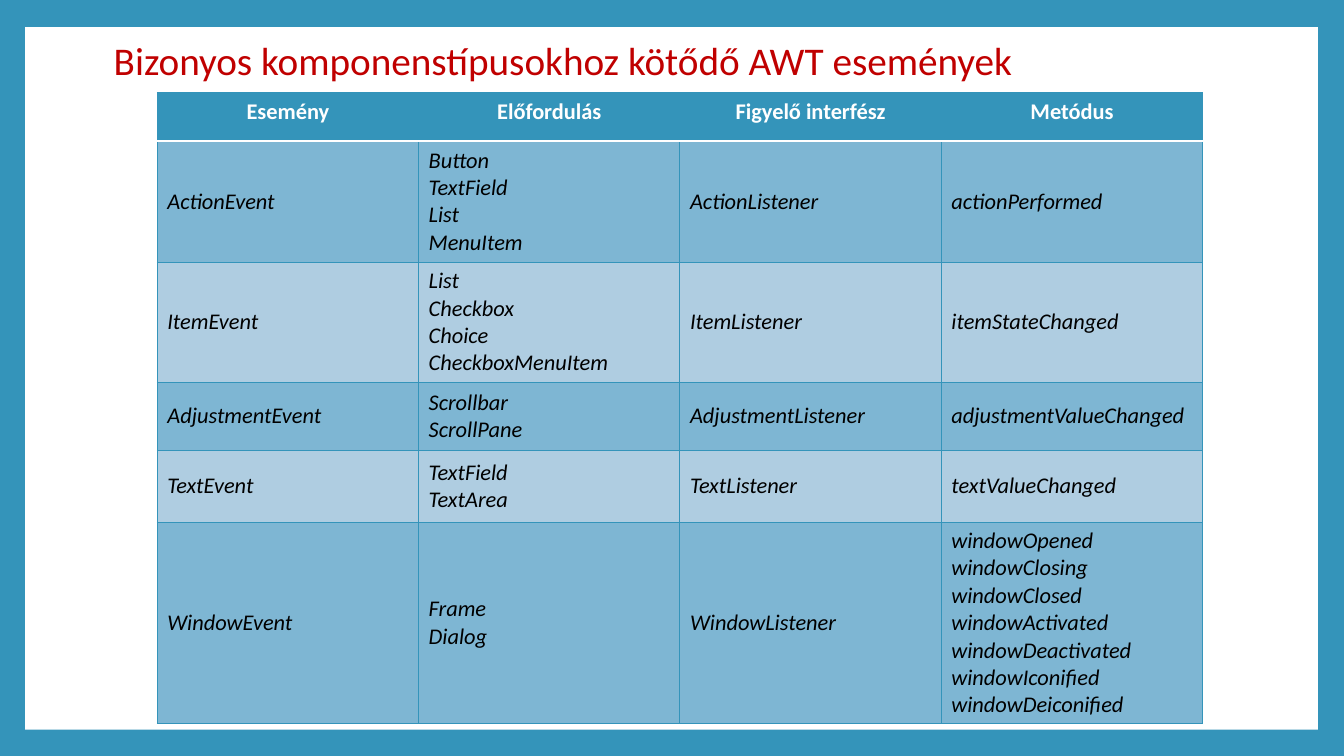
import pptx
import pptx.util
import pptx.dml.color
import pptx.enum.shapes
import pptx.enum.text
import pptx.oxml.ns
import lxml.etree

TITLE = "Bizonyos komponenstípusokhoz kötődő AWT események"
HEADERS = ["Esemény", "Előfordulás", "Figyelő interfész", "Metódus"]
EVENTS = [
    ("ActionEvent", "Button\nTextField\nList\nMenuItem", "ActionListener", "actionPerformed"),
    ("ItemEvent", "List\nCheckbox\nChoice\nCheckboxMenuItem", "ItemListener", "itemStateChanged"),
    ("AdjustmentEvent", "Scrollbar\nScrollPane", "AdjustmentListener", "adjustmentValueChanged"),
    ("TextEvent", "TextField\nTextArea", "TextListener", "textValueChanged"),
    ("WindowEvent", "Frame\nDialog", "WindowListener",
     "windowOpened\nwindowClosing\nwindowClosed\nwindowActivated\n"
     "windowDeactivated\nwindowIconified\nwindowDeiconified"),
]
ROW_HEIGHTS = [0.48, 1.2, 1.19, 0.68, 0.71, 2]
TABLE_LEFT, TABLE_TOP, TABLE_WIDTH = 1.56, 0.92, 10.37
COLORS = {"frame": "3494BA", "paper": "FFFFFF", "title": "C00000", "text": "000000",
          "dark band": "7EB6D3", "light band": "AFCDE1"}
FONT = "Calibri"

Inches, Pt = pptx.util.Inches, pptx.util.Pt
ANCHOR = pptx.enum.text.MSO_ANCHOR


def color(name):
    return pptx.dml.color.RGBColor.from_string(COLORS[name])


def style_font(font, size, color_name, bold=False, italic=False):
    font.name, font.size = FONT, Pt(size)
    font.bold, font.italic = bold, italic
    font.color.rgb = color(color_name)


def add_border(cell, side, color_name, width):
    properties = cell._tc.get_or_add_tcPr()
    line = lxml.etree.SubElement(properties, pptx.oxml.ns.qn(f"a:ln{side}"), w=str(Pt(width)))
    fill = lxml.etree.SubElement(line, pptx.oxml.ns.qn("a:solidFill"))
    lxml.etree.SubElement(fill, pptx.oxml.ns.qn("a:srgbClr"), val=COLORS[color_name])


def fill_cell(cell, text, row):
    header = row == 0
    white_side = {0: "B", 1: "T"}.get(row)
    for side in "LRTB":
        if side == white_side:
            add_border(cell, side, "paper", 1.5)
        else:
            add_border(cell, side, "frame", 0.79)
    band = "frame" if header else "dark band" if row % 2 else "light band"
    cell.fill.solid()
    cell.fill.fore_color.rgb = color(band)
    cell.vertical_anchor = ANCHOR.TOP if header else ANCHOR.MIDDLE
    cell.text = text
    for para in cell.text_frame.paragraphs:
        if header:
            para.alignment = pptx.enum.text.PP_ALIGN.CENTER
        style_font(para.font, 16, "paper" if header else "text", bold=header, italic=not header)


def add_paper(page):
    page.background.fill.solid()
    page.background.fill.fore_color.rgb = color("frame")
    paper = page.shapes.add_shape(pptx.enum.shapes.MSO_SHAPE.RECTANGLE,
                                  Inches(0.25), Inches(0.27), Inches(12.82), Inches(6.97))
    paper.shadow.inherit = False
    paper.fill.solid()
    paper.fill.fore_color.rgb = color("paper")
    paper.line.fill.background()


def add_title(page):
    box = page.shapes.add_textbox(Inches(1.03), Inches(0.35), Inches(10.8), Inches(0.54))
    frame = box.text_frame
    frame.word_wrap = True
    frame.vertical_anchor = ANCHOR.MIDDLE
    frame.text = TITLE
    para = frame.paragraphs[0]
    para.line_spacing = 0.9
    style_font(para.font, 28, "title")


def add_event_table(page):
    rows = [HEADERS, *EVENTS]
    table = page.shapes.add_table(len(rows), len(HEADERS), Inches(TABLE_LEFT), Inches(TABLE_TOP),
                                  Inches(TABLE_WIDTH), Inches(sum(ROW_HEIGHTS))).table
    for column in table.columns:
        column.width = Inches(TABLE_WIDTH / len(HEADERS))
    for row, (texts, height) in enumerate(zip(rows, ROW_HEIGHTS)):
        table.rows[row].height = Inches(height)
        for column, text in enumerate(texts):
            fill_cell(table.cell(row, column), text, row)


def main():
    deck = pptx.Presentation()
    deck.slide_width, deck.slide_height = Inches(13.33), Inches(7.5)
    page = deck.slides.add_slide(deck.slide_layouts[6])
    add_paper(page)
    add_title(page)
    add_event_table(page)
    deck.save("out.pptx")


if __name__ == "__main__":
    main()
